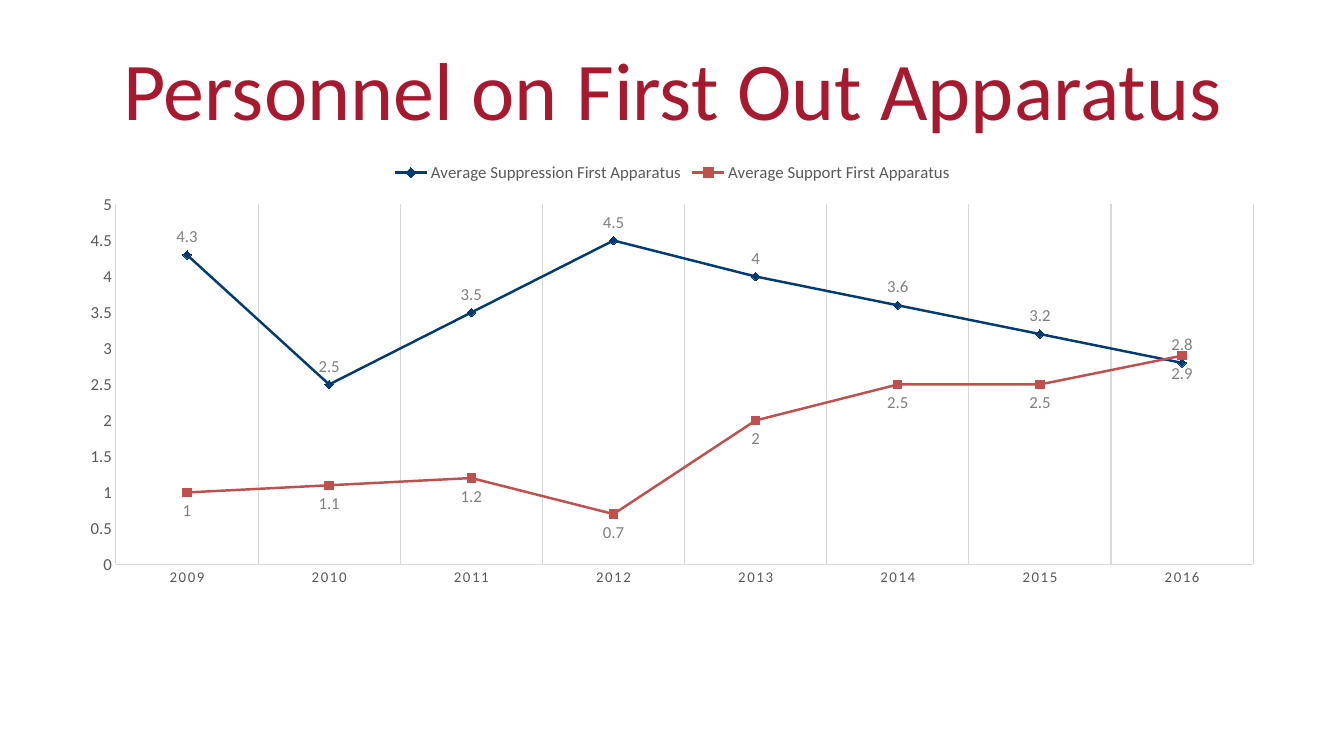
from dataclasses import dataclass

from lxml import etree
from pptx import Presentation
from pptx import util as u
from pptx.chart.data import CategoryChartData
from pptx.dml.color import RGBColor
from pptx.enum import chart as ch, text
from pptx.oxml import parse_xml
from pptx.oxml.ns import qn

PX = 9144  # 100 px to the inch
FONT = "Calibri"
GREY_TEXT, GREY_LINE, LABEL_GREY = "595959", "D9D9D9", "808080"
YEARS = [str(year) for year in range(2009, 2017)]
CHART_NS = "http://schemas.openxmlformats.org/drawingml/2006/chart"


@dataclass(frozen=True)
class Apparatus:
    name: str
    crew: tuple[float, ...]
    color: str
    marker: ch.XL_MARKER_STYLE
    label_side: ch.XL_LABEL_POSITION


APPARATUS = (
    Apparatus("Average Suppression First Apparatus",
              (4.3, 2.5, 3.5, 4.5, 4, 3.6, 3.2, 2.8), "003C71",
              ch.XL_MARKER_STYLE.DIAMOND, ch.XL_LABEL_POSITION.ABOVE),
    Apparatus("Average Support First Apparatus",
              (1, 1.1, 1.2, 0.7, 2, 2.5, 2.5, 2.9), "C0504D",
              ch.XL_MARKER_STYLE.SQUARE, ch.XL_LABEL_POSITION.BELOW),
)


def px(length: int) -> u.Emu:
    return u.Emu(length * PX)


def rgb(color: str) -> RGBColor:
    return RGBColor.from_string(color)


def style_font(font, size: float, color: str) -> None:
    font.name = FONT
    font.size = u.Pt(size)
    font.bold = False
    font.color.rgb = rgb(color)


def style_line(line, color: str, width: float) -> None:
    line.color.rgb = rgb(color)
    line.width = u.Pt(width)


def write(frame, wording: str, *, size: float, color: str,
          align=text.PP_ALIGN.CENTER, anchor=text.MSO_ANCHOR.MIDDLE) -> None:
    frame.word_wrap = True
    frame.auto_size = text.MSO_AUTO_SIZE.NONE
    frame.vertical_anchor = anchor
    paragraph = frame.paragraphs[0]
    paragraph.alignment = align
    run = paragraph.add_run()
    run.text = wording
    style_font(run.font, size, color)


def style_axis(axis, size: float) -> None:
    axis.major_tick_mark = axis.minor_tick_mark = ch.XL_TICK_MARK.NONE
    style_font(axis.tick_labels.font, size, GREY_TEXT)
    style_line(axis.format.line, GREY_LINE, 0.75)


def style_series(series, apparatus: Apparatus) -> None:
    series.smooth = False
    style_line(series.format.line, apparatus.color, 1.75)
    marker = series.marker
    marker.style, marker.size = apparatus.marker, 6
    marker.format.fill.solid()
    marker.format.fill.fore_color.rgb = rgb(apparatus.color)
    style_line(marker.format.line, apparatus.color, 0.75)
    labels = series.data_labels
    labels.show_value = True
    labels.position = apparatus.label_side
    style_font(labels.font, 12, LABEL_GREY)


def place_plot(chart, **fractions: float) -> None:
    """Fix the inner plot area as fractions of the chart frame."""
    area = chart.element.find(f".//{qn('c:plotArea')}")
    for layout in area.findall(qn("c:layout")):
        area.remove(layout)
    layout = parse_xml(f'<c:layout xmlns:c="{CHART_NS}"/>')
    manual = etree.SubElement(layout, qn("c:manualLayout"))
    settings = {"layoutTarget": "inner", "xMode": "edge", "yMode": "edge", **fractions}
    for tag, setting in settings.items():
        etree.SubElement(manual, qn(f"c:{tag}")).set("val", str(setting))
    area.insert(0, layout)


def add_crew_chart(slide) -> None:
    crew = CategoryChartData(number_format="General")
    crew.categories = YEARS
    for apparatus in APPARATUS:
        crew.add_series(apparatus.name, apparatus.crew)
    chart = slide.shapes.add_chart(ch.XL_CHART_TYPE.LINE_MARKERS, px(67), px(150),
                                   px(1200), px(441), crew).chart
    style_font(chart.font, 10, "000000")
    chart.has_title = False
    chart.has_legend = True
    chart.legend.position = ch.XL_LEGEND_POSITION.TOP
    chart.legend.include_in_layout = False
    style_font(chart.legend.font, 12, GREY_TEXT)

    years, staffing = chart.category_axis, chart.value_axis
    style_axis(years, 10.6)
    style_axis(staffing, 12)
    years.has_major_gridlines = True
    style_line(years.major_gridlines.format.line, GREY_LINE, 0.75)
    staffing.has_major_gridlines = False
    staffing.minimum_scale, staffing.maximum_scale, staffing.major_unit = 0, 5, 0.5
    for properties in chart.element.xpath(".//c:catAx/c:txPr//a:defRPr"):
        properties.set("spc", "120")

    chart.plots[0].vary_by_categories = False
    for series, apparatus in zip(chart.plots[0].series, APPARATUS):
        style_series(series, apparatus)
    place_plot(chart, x=0.04, y=0.12, w=0.94, h=0.81)


def main() -> None:
    deck = Presentation()
    deck.slide_width, deck.slide_height = px(1333), px(750)
    slide = deck.slides.add_slide(deck.slide_layouts[5])
    title = slide.shapes.title
    title.left, title.top, title.width, title.height = map(px, (67, 25, 1200, 125))
    write(title.text_frame, "Personnel on First Out Apparatus", size=58.6, color="A6192E")
    add_crew_chart(slide)
    deck.save("out.pptx")


if __name__ == "__main__":
    main()
